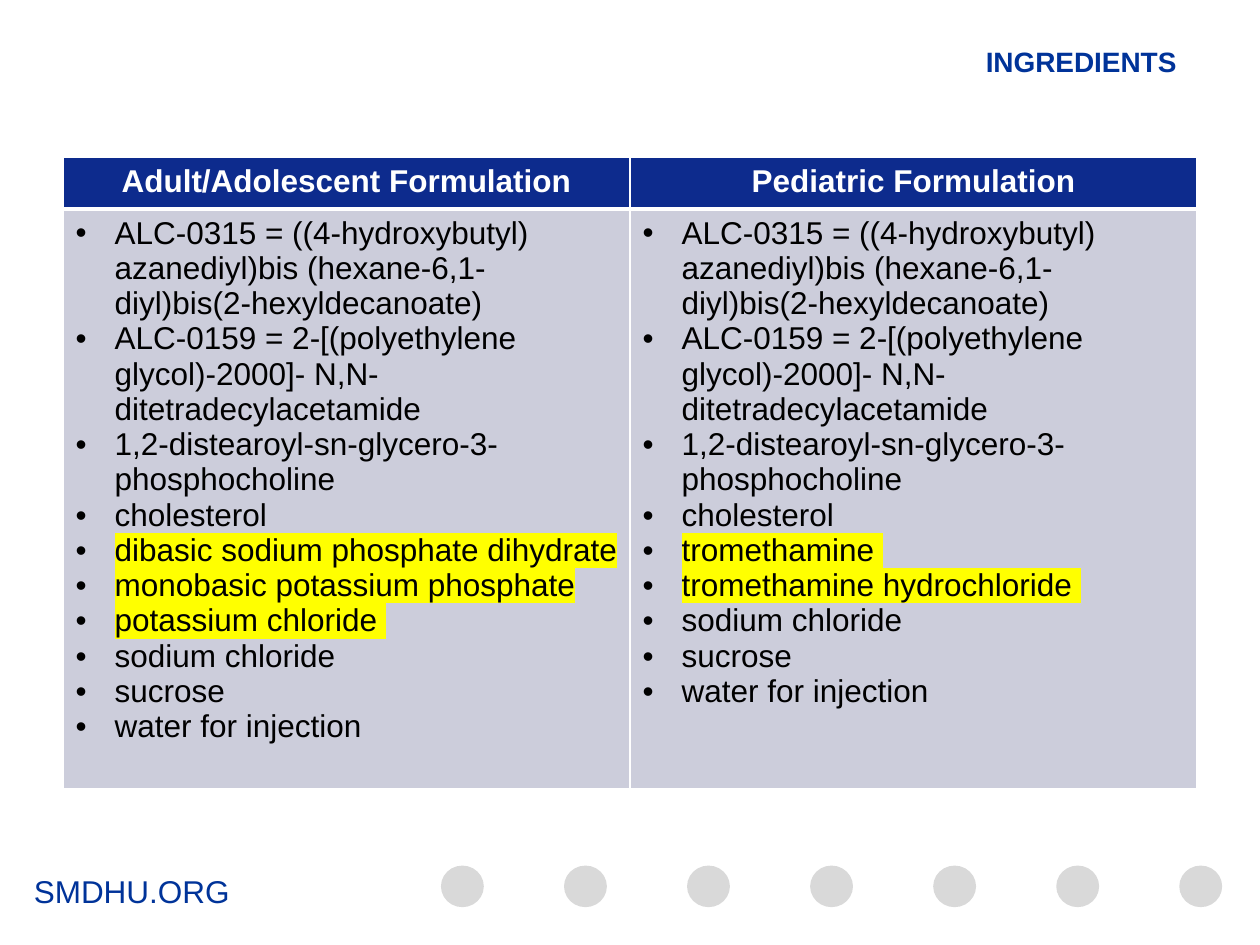
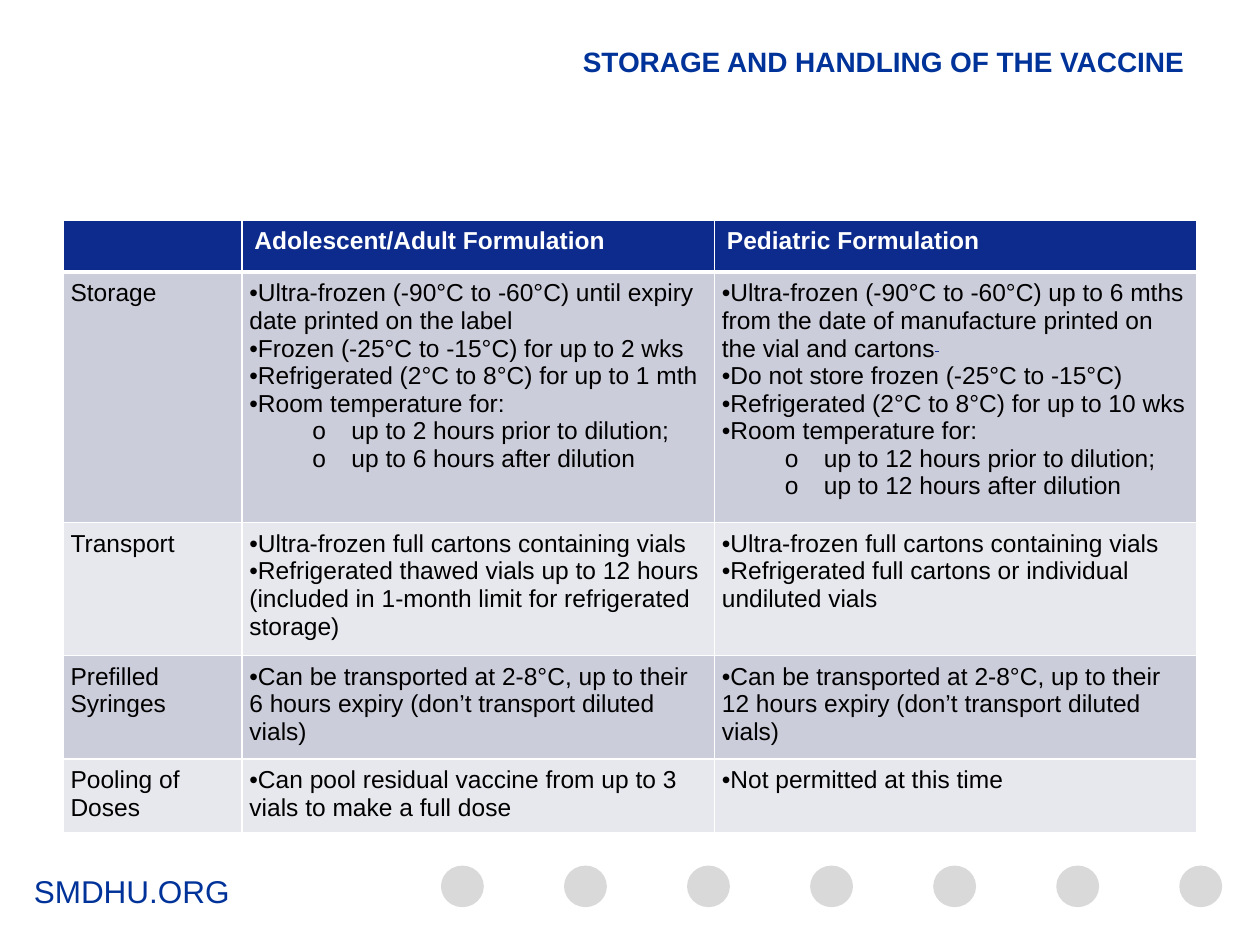
from dataclasses import dataclass
from lxml.etree import SubElement as Sub
from pptx import Presentation
from pptx.dml.color import RGBColor as Rgb
from pptx.enum.shapes import MSO_SHAPE as Shape
from pptx.enum.text import MSO_ANCHOR as Anchor, MSO_AUTO_SIZE as Fit, PP_ALIGN as Align
from pptx.oxml.ns import qn
from pptx.util import Emu, Inches as In, Pt

# Content: an item is plain text or (text, kind)
SITE = "SMDHU.ORG"
LIPIDS = [
    "ALC-0315 = ((4-hydroxybutyl) azanediyl)bis (hexane-6,1-diyl)bis(2-hexyldecanoate)",
    "ALC-0159 = 2-[(polyethylene glycol)-2000]- N,N-ditetradecylacetamide",
    "1,2-distearoyl-sn-glycero-3-phosphocholine",
    "cholesterol",
]
BASE = ["sodium chloride", "sucrose", "water for injection"]
ADULT = [("dibasic sodium phosphate dihydrate", "mark"),
         ("monobasic potassium phosphate", "mark"),
         ("potassium chloride ", "mark")]
CHILD = [("tromethamine ", "mark"), ("tromethamine hydrochloride ", "mark")]
FULL = "Ultra-frozen full cartons containing vials"

SLIDES = [
    dict(
        title="INGREDIENTS ", tall=0.7, top=1.25, size=18, align=Align.CENTER,
        pad=None, hang=0.31, label=False, cols=[4.5, 4.5], rows=[0.41, 4.59],
        cells=[
            ["Adult/Adolescent Formulation", "Pediatric Formulation"],
            [LIPIDS + ADULT + BASE, LIPIDS + CHILD + BASE],
        ]),
    dict(
        title="STORAGE AND HANDLING OF THE VACCINE", tall=1.25, top=1.75, size=14,
        align=Align.LEFT, pad=0.06, hang=0, label=True,
        cols=[1.42, 3.75, 3.83], rows=[0.41, 1.85, 0.98, 0.76, 0.54],
        cells=[
            ["", "Adolescent/Adult Formulation", "Pediatric Formulation"],
            ["Storage",
             ["Ultra-frozen (-90°C to -60°C) until expiry date printed on the label",
              "Frozen (-25°C to -15°C) for up to 2 wks",
              "Refrigerated (2°C to 8°C) for up to 1 mth",
              "Room temperature for:",
              ("up to 2 hours prior to dilution;", "sub"),
              ("up to 6 hours after dilution", "sub")],
             [("Ultra-frozen (-90°C to -60°C) up to 6 mths from the date of "
               "manufacture printed on the vial and cartons", "note"),
              "Do not store frozen (-25°C to -15°C)",
              "Refrigerated (2°C to 8°C) for up to 10 wks",
              "Room temperature for:",
              ("up to 12 hours prior to dilution;", "sub"),
              ("up to 12 hours after dilution", "sub")]],
            ["Transport",
             [FULL, "Refrigerated thawed vials up to 12 hours (included in 1-month "
                    "limit for refrigerated storage)"],
             [FULL, "Refrigerated full cartons or individual undiluted vials"]],
            ["Prefilled Syringes",
             ["Can be transported at 2-8°C, up to their 6 hours expiry "
              "(don’t transport diluted vials)"],
             ["Can be transported at 2-8°C, up to their 12 hours expiry "
              "(don’t transport diluted vials)"]],
            ["Pooling of Doses",
             ["Can pool residual vaccine from up to 3 vials to make a full dose"],
             ["Not permitted at this time"]],
        ]),
]


@dataclass(frozen=True)
class Theme:
    font: str = "Arial"
    blue: str = "003399"
    navy: str = "0D2B8D"
    ink: str = "000000"
    white: str = "FFFFFF"
    dot: str = "D9D9D9"
    mark: str = "FFFF00"
    bands: tuple = ("CCCDDB", "E7E8EE")
    head: int = 16
    foot: int = 18
    thin: int = 1
    thick: int = 3


T = Theme()
EDGE, WIDE = 0.5, 9
DOTS, FIRST, LAST, FOOT = 7, 3.5, 9.36, 6.87


# Text
def style(run, size, color, bold=False, mark=False):
    font = run.font
    font.size, font.bold = Pt(size), bold
    font.color.rgb = Rgb.from_string(color)
    if mark:
        glow = Sub(run._r.get_or_add_rPr(), qn("a:highlight"))
        Sub(glow, qn("a:srgbClr"), val=T.mark)
    font.name = T.font


def bullet(para, char, left, hang):
    props = para._p.get_or_add_pPr()
    props.set("marL", str(In(left)))
    props.set("indent", str(-In(hang)))
    Sub(props, qn("a:buFont"), typeface=T.font)
    Sub(props, qn("a:buChar"), char=char)


def put(frame, items, size=18, color=T.ink, bold=False, align=Align.LEFT, hang=None):
    """Write text; a hang value turns the items into a bullet list."""
    frame.word_wrap = True
    for i, item in enumerate([items] if isinstance(items, str) else items):
        text, kind = (item, "") if isinstance(item, str) else item
        para = frame.add_paragraph() if i else frame.paragraphs[0]
        para.alignment = align
        if kind == "sub":
            para.level = 1
            bullet(para, "o", 0.81, 0.31)
        elif hang is not None:
            bullet(para, "•", hang, hang)
        if text:
            run = para.add_run()
            run.text = text
            style(run, size, color, bold, kind == "mark")
        if kind == "note":
            run = para.add_run()
            run.text = " "
            style(run, size, T.navy)
            run.font.underline = True
            run._r.get_or_add_rPr().set("baseline", "30000")


# Table
def border(cell, row):
    props = cell._tc.get_or_add_tcPr()
    heavy = {0: "B", 1: "T"}.get(row)
    for side in "LRTB":
        width = T.thick if side == heavy else T.thin
        line = Sub(props, qn(f"a:ln{side}"), w=str(Pt(width)))
        Sub(Sub(line, qn("a:solidFill")), qn("a:srgbClr"), val=T.white)


def grid(slide, data):
    cells, rows, cols = data["cells"], data["rows"], data["cols"]
    table = slide.shapes.add_table(
        len(rows), len(cols), In(EDGE), In(data["top"]), In(WIDE), In(sum(rows))).table
    table.horz_banding = False
    for col, width in zip(table.columns, cols):
        col.width = In(width)
    for r, (row, tall) in enumerate(zip(cells, rows)):
        table.rows[r].height = In(tall)
        for c, items in enumerate(row):
            cell = table.cell(r, c)
            border(cell, r)
            cell.fill.solid()
            fill = T.bands[(r - 1) % 2] if r else T.navy
            cell.fill.fore_color.rgb = Rgb.from_string(fill)
            if r == 0:
                put(cell.text_frame, items, size=data["size"], color=T.white,
                    bold=True, align=data["align"])
                continue
            if data["pad"]:
                cell.margin_left = cell.margin_right = In(data["pad"])
                cell.margin_top = cell.margin_bottom = In(data["pad"])
            label = data["label"] and c == 0
            put(cell.text_frame, items, size=data["size"],
                hang=None if label else data["hang"])


# Title and footer
def title(slide, data):
    box = slide.shapes.title
    box.left, box.top, box.width, box.height = map(In, (EDGE, 0.3, WIDE, data["tall"]))
    frame = box.text_frame
    frame.auto_size, frame.vertical_anchor = Fit.NONE, Anchor.TOP
    put(frame, data["title"], size=T.head, color=T.blue, bold=True, align=Align.RIGHT)


def footer(slide):
    box = slide.shapes.add_textbox(In(0.17), In(FOOT), In(8.5), In(0.63))
    put(box.text_frame, SITE, size=T.foot, color=T.blue)
    step = (LAST - FIRST) / (DOTS - 1)
    for i in range(DOTS):
        dot = slide.shapes.add_shape(
            Shape.OVAL, Emu(In(FIRST + i * step)), In(FOOT), In(0.34), In(0.33))
        dot.shadow.inherit = False
        dot.fill.solid()
        dot.fill.fore_color.rgb = Rgb.from_string(T.dot)
        dot.line.fill.background()


def main():
    deck = Presentation()
    deck.slide_width, deck.slide_height = In(10), In(7.5)
    for data in SLIDES:
        slide = deck.slides.add_slide(deck.slide_layouts[5])
        footer(slide)
        grid(slide, data)
        title(slide, data)
    deck.save("out.pptx")


if __name__ == "__main__":
    main()
